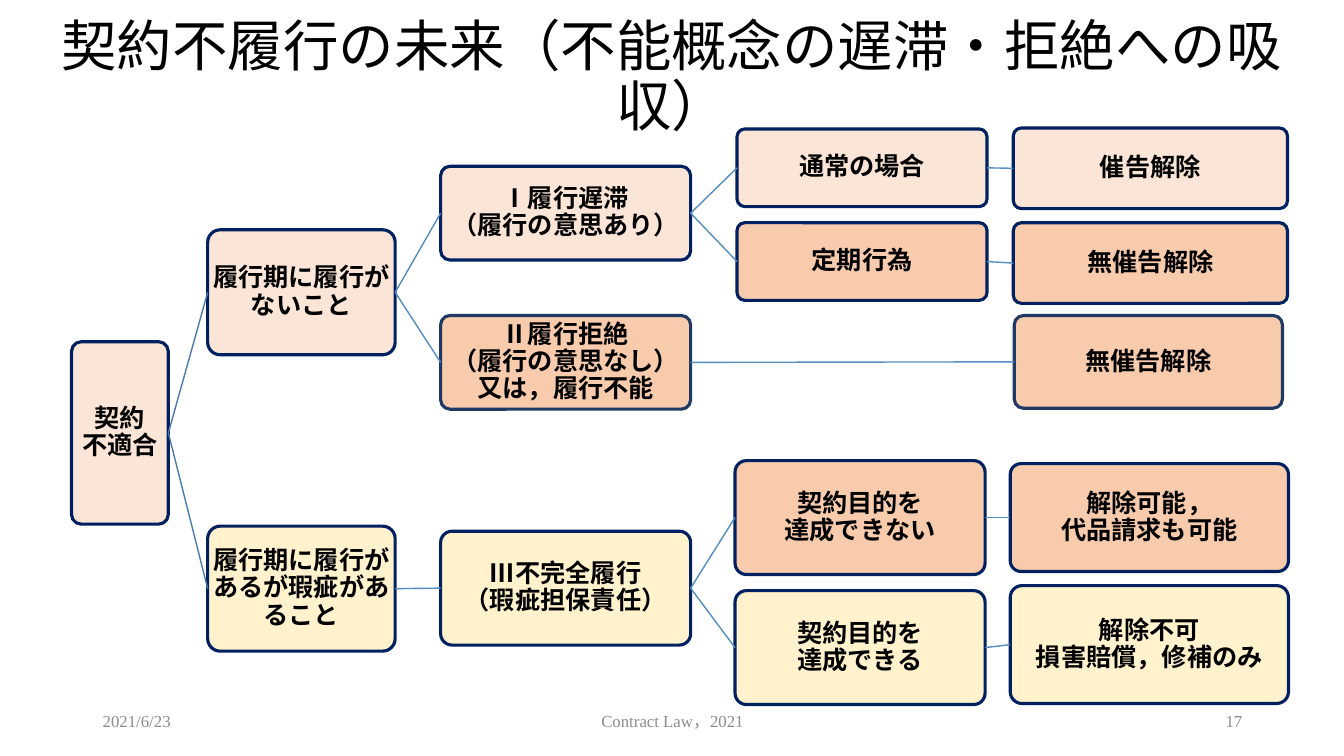
from lxml import etree
from pptx import Presentation
from pptx.dml.color import RGBColor
from pptx.enum.shapes import MSO_CONNECTOR, MSO_SHAPE
from pptx.enum.text import MSO_ANCHOR, MSO_AUTO_SIZE, PP_ALIGN
from pptx.oxml.ns import qn
from pptx.util import Emu, Pt

ROUND = MSO_SHAPE.ROUNDED_RECTANGLE
LINE = MSO_CONNECTOR.STRAIGHT
MIDDLE = MSO_ANCHOR.MIDDLE
LEFT, CENTER, RIGHT = PP_ALIGN.LEFT, PP_ALIGN.CENTER, PP_ALIGN.RIGHT
SANS, SERIF = "Noto Sans CJK JP", "Times New Roman"
BLACK, GRAY = "000000", "8C8C8C"
PINK, PEACH, CREAM = "FBE5D6", "F8CBAD", "FFF2CC"
NAVY, SLATE = "002060", "203864"
STEEL, BLUE = "497CAB", "538DC1"
PX = 9144  # 100 px to the inch

TITLE = "契約不履行の未来（不能概念の遅滞・拒絶への吸収）"

# name, parent, text, (left, top, width, height), fill, border
NODES = [
    ("root", None, "契約\n不適合", (71, 339, 96, 181), PINK, NAVY),
    ("none", "root", "履行期に履行がないこと", (206, 228, 186, 124), PINK, NAVY),
    ("delay", "none", "Ⅰ履行遅滞\n（履行の意思あり）", (437, 165, 248, 93), PINK, NAVY),
    ("usual", "delay", "通常の場合", (731, 128, 248, 77), PINK, NAVY),
    ("notice", "usual", "催告解除", (1005, 127, 272, 80), PINK, NAVY),
    ("fixed", "delay", "定期行為", (731, 221, 248, 77), PEACH, NAVY),
    ("prompt", "fixed", "無催告解除", (1005, 221, 272, 80), PEACH, NAVY),
    ("refuse", "none", "Ⅱ履行拒絶\n（履行の意思なし）\n又は，履行不能",
     (437, 313, 248, 93), PEACH, SLATE),
    ("direct", "refuse", "無催告解除", (1006, 313, 266, 92), PEACH, SLATE),
    ("flaw", "root", "履行期に履行があるが瑕疵があること",
     (206, 522, 186, 124), CREAM, NAVY),
    ("partial", "flaw", "Ⅲ不完全履行\n（瑕疵担保責任）", (437, 527, 248, 113), CREAM, NAVY),
    ("failed", "partial", "契約目的を\n達成できない", (729, 457, 248, 113), PEACH, NAVY),
    ("cancel", "failed", "解除可能，\n代品請求も可能", (1002, 460, 276, 107), PEACH, NAVY),
    ("met", "partial", "契約目的を\n達成できる", (729, 586, 248, 113), CREAM, NAVY),
    ("repair", "met", "解除不可\n損害賠償，修補のみ", (1002, 581, 276, 117), CREAM, NAVY),
]

FOOTER = [
    ("2021/6/23", 92, 300, LEFT),
    ("Contract Law，2021", 442, 450, CENTER),
    ("17", 942, 300, RIGHT),
]


def color(code):
    return RGBColor.from_string(code)


def scale(box):
    return [Emu(n * PX) for n in box]


def write(frame, text, size, font, ink, align, bold=False, lead=None):
    frame.word_wrap = True
    frame.auto_size = MSO_AUTO_SIZE.NONE
    frame.vertical_anchor = MIDDLE
    para = frame.paragraphs[0]
    para.text = text
    para.alignment = align
    if lead:
        para.line_spacing = lead
    for run in para.runs:
        run.font.size = Pt(size)
        run.font.name = font
        run.font.bold = bold
        run.font.color.rgb = color(ink)
        # East Asian typeface follows the Latin one
        latin = run.font._element.find(qn("a:latin"))
        east = etree.Element(qn("a:ea"), typeface=SANS)
        latin.addnext(east)


def add_node(shapes, text, box, fill, border):
    node = shapes.add_shape(ROUND, *scale(box))
    node.adjustments[0] = 0.1
    node.shadow.inherit = False
    node.fill.solid()
    node.fill.fore_color.rgb = color(fill)
    node.line.color.rgb = color(border)
    node.line.width = Pt(2.25)
    frame = node.text_frame
    frame.margin_left = frame.margin_right = Emu(PX)
    frame.margin_top = frame.margin_bottom = Emu(PX)
    write(frame, text, 18, SERIF, BLACK, CENTER, True, 0.9)
    return node


def add_link(shapes, start, end, ink):
    link = shapes.add_connector(LINE, 0, 0, 0, 0)
    link.begin_connect(start, 3)
    link.end_connect(end, 1)
    link.line.color.rgb = color(ink)
    link.line.width = Pt(1)
    etree.SubElement(link._element.spPr, qn("a:effectLst"))


def main():
    deck = Presentation()
    deck.slide_width, deck.slide_height = scale((1333, 750))
    slide = deck.slides.add_slide(deck.slide_layouts[5])
    shapes = slide.shapes

    # Title
    title = shapes.title
    title.left, title.top, title.width, title.height = scale((24, 40, 1284, 75))
    write(title.text_frame, TITLE, 39.6, SANS, BLACK, CENTER, lead=0.9)

    # Tree of boxes, each joined to its parent
    made = {}
    for name, parent, text, box, fill, border in NODES:
        made[name] = add_node(shapes, text, box, fill, border)
        if parent:
            ink = STEEL if parent == "root" else BLUE
            add_link(shapes, made[parent], made[name], ink)

    # Footer
    for text, left, width, align in FOOTER:
        box = shapes.add_textbox(*scale((left, 695, width, 40)))
        write(box.text_frame, text, 12, SERIF, GRAY, align)

    deck.save("out.pptx")


if __name__ == "__main__":
    main()
